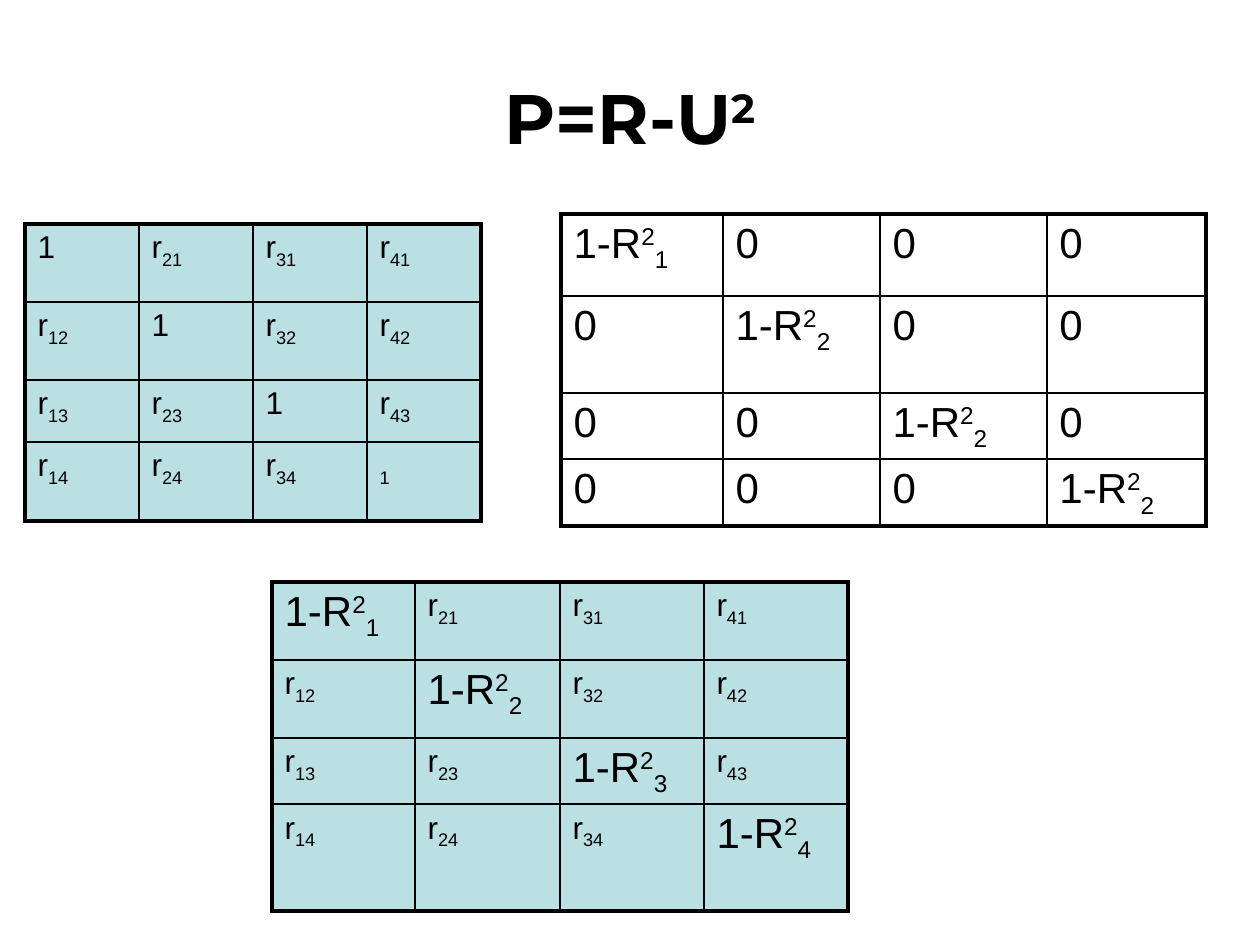
from dataclasses import dataclass
from typing import Callable, Optional

from lxml import etree
from pptx import Presentation
from pptx import util as u
from pptx.dml import color
from pptx.enum import text
from pptx.oxml import ns

PX_PER_INCH = 126


@dataclass(frozen=True)
class Theme:
    ink: color.RGBColor = color.RGBColor(0, 0, 0)
    tint: color.RGBColor = color.RGBColor(0xBB, 0xE0, 0xE3)
    title_font: str = "Montserrat"
    body_font: str = "Arial"
    title_size: int = 40
    large_size: int = 24
    small_size: int = 18
    outer_line: float = 2.25
    inner_line: float = 1
    superscript: int = 30
    subscript: int = -25


@dataclass(frozen=True)
class Term:
    base: str = ""
    upper: str = ""
    lower: str = ""
    size: int = 18


@dataclass(frozen=True)
class Matrix:
    left: int
    top: int
    columns: tuple[int, ...]
    rows: tuple[int, ...]
    term: Callable[[int, int], Term]
    fill: Optional[color.RGBColor] = None


THEME = Theme()


def px(length: int) -> u.Emu:
    return u.Emu(round(length * u.Inches(1) / PX_PER_INCH))


def apply(target: object, values: dict) -> None:
    for name, value in values.items():
        setattr(target, name, value)


def add_span(para, content: str, size: int, font: str, baseline: int = 0, bold: bool = False) -> None:
    span = para.add_run()
    span.text = content
    apply(span.font, {"name": font, "size": u.Pt(size), "bold": bold})
    span.font.color.rgb = THEME.ink
    if baseline:
        span.font._element.set("baseline", str(baseline * 1000))


def write_term(para, term: Term, font: str, bold: bool = False) -> None:
    parts = ((term.base, 0), (term.upper, THEME.superscript), (term.lower, THEME.subscript))
    for content, baseline in parts:
        if content:
            add_span(para, content, term.size, font, baseline, bold)


def draw_borders(cell, widths: dict[str, float]) -> None:
    properties = cell._tc.get_or_add_tcPr()
    for index, (side, width) in enumerate(widths.items()):
        line = etree.Element(ns.qn(f"a:{side}"), w=str(u.Pt(width)))
        fill = etree.SubElement(line, ns.qn("a:solidFill"))
        etree.SubElement(fill, ns.qn("a:srgbClr"), val=str(THEME.ink))
        properties.insert(index, line)


def draw_matrix(page, matrix: Matrix) -> None:
    row_count, column_count = len(matrix.rows), len(matrix.columns)
    frame = page.shapes.add_table(
        row_count, column_count, px(matrix.left), px(matrix.top),
        px(sum(matrix.columns)), px(sum(matrix.rows)))
    table = frame.table
    apply(table, {"first_row": False, "horz_banding": False})
    for column, width in zip(table.columns, matrix.columns):
        column.width = px(width)
    for row, height in zip(table.rows, matrix.rows):
        row.height = px(height)

    for i in range(row_count):
        for j in range(column_count):
            cell = table.cell(i, j)
            if matrix.fill is None:
                cell.fill.background()
            else:
                cell.fill.solid()
                cell.fill.fore_color.rgb = matrix.fill
            edges = {"lnL": j == 0, "lnR": j == column_count - 1,
                     "lnT": i == 0, "lnB": i == row_count - 1}
            draw_borders(cell, {side: THEME.outer_line if outer else THEME.inner_line
                                for side, outer in edges.items()})
            write_term(cell.text_frame.paragraphs[0], matrix.term(i + 1, j + 1), THEME.body_font)


def correlation(row: int, column: int) -> Term:
    return Term("r", lower=f"{column}{row}", size=THEME.small_size)


def uniqueness(index: int) -> Term:
    return Term("1-R", "2", str(index), THEME.large_size)


def full_term(row: int, column: int) -> Term:
    if row != column:
        return correlation(row, column)
    if row == 4:
        return Term(lower="1", size=THEME.small_size)
    return Term("1", size=THEME.small_size)


def unique_term(row: int, column: int) -> Term:
    return uniqueness(min(row, 2)) if row == column else Term("0", size=THEME.large_size)


def reduced_term(row: int, column: int) -> Term:
    return uniqueness(row) if row == column else correlation(row, column)


MATRICES = (
    Matrix(25, 224, (114,) * 4, (78, 78, 62, 79), full_term, THEME.tint),
    Matrix(561, 214, (162, 157, 167, 159), (82, 97, 66, 67), unique_term),
    Matrix(272, 582, (143, 145, 144, 144), (78, 78, 66, 107), reduced_term, THEME.tint),
)


def draw_title(page) -> None:
    box = page.shapes.title
    apply(box, {"left": px(63), "top": px(38), "width": px(1134), "height": px(158)})
    apply(box.text_frame, {"word_wrap": True, "vertical_anchor": text.MSO_ANCHOR.MIDDLE})
    para = box.text_frame.paragraphs[0]
    para.alignment = text.PP_ALIGN.CENTER
    write_term(para, Term("P=R-U", "2", size=THEME.title_size), THEME.title_font, bold=True)


def main() -> None:
    deck = Presentation()
    apply(deck, {"slide_width": px(1260), "slide_height": px(945)})
    page = deck.slides.add_slide(deck.slide_layouts[5])
    draw_title(page)
    for matrix in MATRICES:
        draw_matrix(page, matrix)
    deck.save("out.pptx")


if __name__ == "__main__":
    main()
